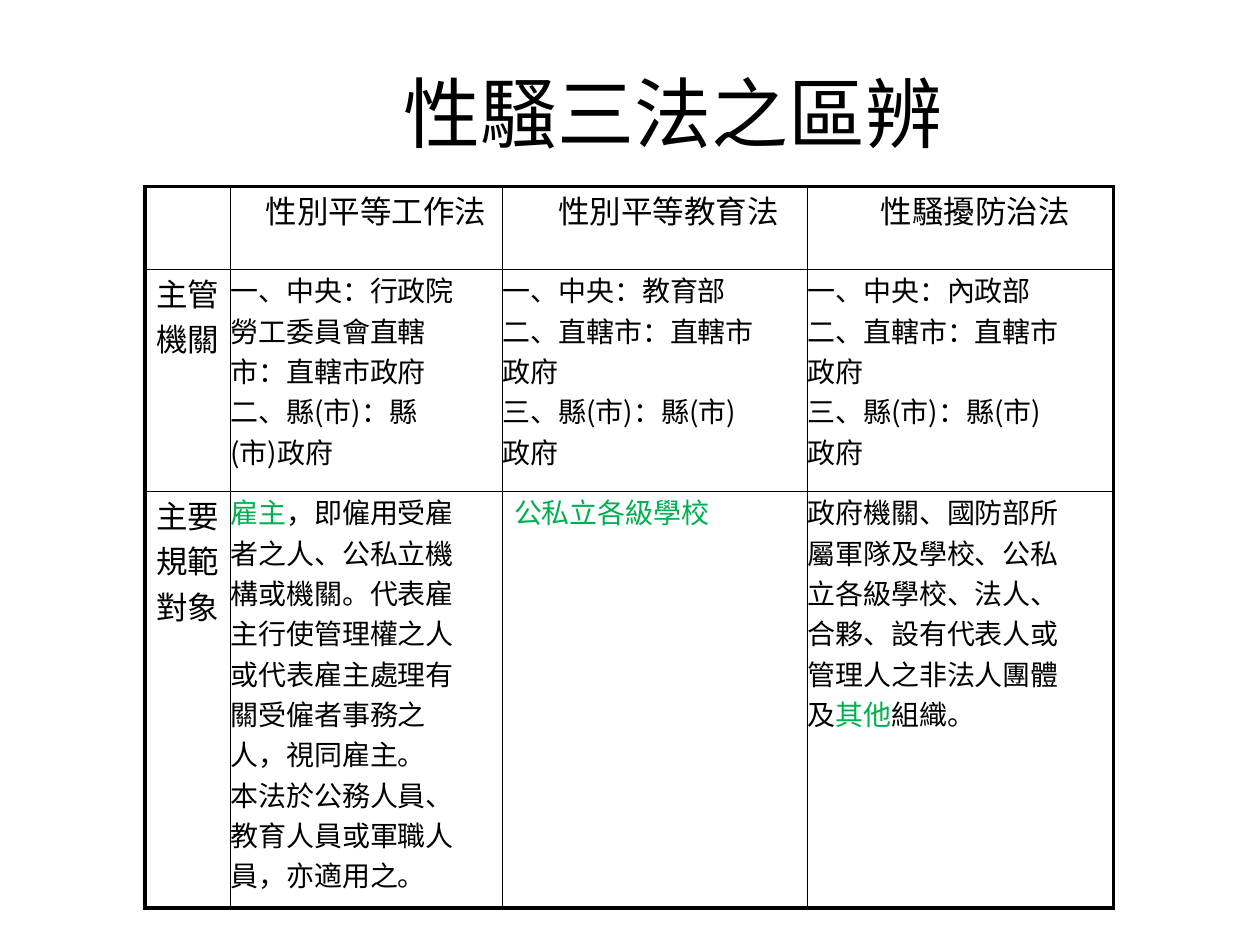
from lxml.etree import SubElement
from pptx import Presentation
from pptx.dml.color import RGBColor
from pptx.enum.text import MSO_ANCHOR as Anchor, MSO_AUTO_SIZE as Fit, PP_ALIGN as Align
from pptx.oxml.ns import qn
from pptx.util import Inches, Pt

SC, TC = "Noto Sans CJK SC", "Noto Sans CJK TC"
BLACK, GREEN = "000000", "00B050"


def style(run, size, face, color=BLACK):
    run.font.size = Pt(size)
    run.font.name = face
    run.font.color.rgb = RGBColor.from_string(color)
    SubElement(run.font._element, qn("a:ea")).set("typeface", face)


def border(cell, edges):
    props = cell._tc.get_or_add_tcPr()
    for spot, (tag, width) in enumerate(edges.items()):
        line = props.makeelement(qn("a:" + tag), {"w": str(Pt(width))})
        if width:
            fill = SubElement(line, qn("a:solidFill"))
            SubElement(fill, qn("a:srgbClr")).set("val", BLACK)
        else:
            SubElement(line, qn("a:noFill"))
        props.insert(spot, line)


deck = Presentation()
deck.slide_width, deck.slide_height = Inches(10), Inches(7.5)
slide = deck.slides.add_slide(deck.slide_layouts[5])

# Title
title = slide.shapes.title
title.left, title.top = Inches(1.14), Inches(0.44)
title.width, title.height = Inches(7.15), Inches(0.82)
frame = title.text_frame
frame.text = "性騷三法之區辨"
frame.auto_size = Fit.NONE
frame.vertical_anchor = Anchor.MIDDLE
frame.margin_left = frame.margin_right = frame.margin_bottom = 0
frame.margin_top = Inches(0.08)
para = frame.paragraphs[0]
para.alignment = Align.CENTER
para._p.get_or_add_pPr().set("marL", str(Inches(1.25)))
style(para.runs[0], 44, SC)

# Cell content: (row, column) -> (size, font, indent, lines)
local = ["二、直轄市：直轄市", "政府", "三、縣(市)：縣(市)", "政府"]
cells = {
    (0, 1): (18, SC, 0.28, ["性別平等工作法"]),
    (0, 2): (18, SC, 0.44, ["性別平等教育法"]),
    (0, 3): (18, SC, 0.58, ["性騷擾防治法"]),
    (1, 1): (16, SC, 0, ["一、中央：行政院", "勞工委員會直轄", "市：直轄市政府",
                         "二、縣(市)：縣", "(市)政府"]),
    (1, 2): (16, SC, 0, ["一、中央：教育部"] + local),
    (1, 3): (16, SC, 0, ["一、中央：內政部"] + local),
    (3, 1): (16, SC, 0, ["雇主，即僱用受雇", "者之人、公私立機", "構或機關。代表雇",
                         "主行使管理權之人", "或代表雇主處理有", "關受僱者事務之",
                         "人，視同雇主。", "本法於公務人員、", "教育人員或軍職人",
                         "員，亦適用之。"]),
    (3, 2): (16, SC, 0.09, ["公私立各級學校"]),
    (3, 3): (16, SC, 0, ["政府機關、國防部所", "屬軍隊及學校、公私", "立各級學校、法人、",
                         "合夥、設有代表人或", "管理人之非法人團體", "及其他組織。"]),
}
for row, label in enumerate(["主管", "機關", "主要", "規範", "對象"], 1):
    cells[row, 0] = (18, TC, 0.09, [label])

# Lines that hold green words, cut into runs
cuts = {
    "雇主，即僱用受雇": [("雇主", GREEN), ("，即僱用受雇", BLACK)],
    "公私立各級學校": [("公私立各級學校", GREEN)],
    "及其他組織。": [("及", BLACK), ("其他", GREEN), ("組織。", BLACK)],
}

# Table grid
wide = [0.68, 2.16, 2.42, 2.43]
high = [0.66, 0.36, 1.4, 0.36, 0.3, 2.58]
table = slide.shapes.add_table(len(high), len(wide), Inches(1.15), Inches(1.48),
                               Inches(sum(wide)), Inches(sum(high))).table
table.first_row = table.horz_banding = False
for col, size in zip(table.columns, wide):
    col.width = Inches(size)
for row, size in zip(table.rows, high):
    row.height = Inches(size)

# Merged bands, fills and borders: thick outside, thin inside
for first, last in [(0, 0), (1, 2), (3, 5)]:
    for c in range(len(wide)):
        if c and last > first:
            table.cell(first, c).merge(table.cell(last, c))
        for r in range(first, last + 1):
            cell = table.cell(r, c)
            cell.margin_left = cell.margin_right = 0
            cell.margin_top = cell.margin_bottom = 0
            cell.fill.background()
            ends = r == last or cell.is_merge_origin
            border(cell, {
                "lnL": 1 if c else 2.25,
                "lnR": 1 if c < 3 else 2.25,
                "lnT": 0 if r > first else 1 if r else 2.25,
                "lnB": 0 if not ends else 1 if last < 5 else 2.25,
            })

# Cell text
for (r, c), (size, face, indent, lines) in cells.items():
    frame = table.cell(r, c).text_frame
    frame.text = "\n".join(lines)
    for para, line in zip(frame.paragraphs, lines):
        para._p.get_or_add_pPr().set("marL", str(Inches(indent)))
        if line in cuts:
            para.text = ""
            for word, color in cuts[line]:
                run = para.add_run()
                run.text = word
                style(run, size, face, color)
        else:
            style(para.runs[0], size, face)

deck.save("out.pptx")
